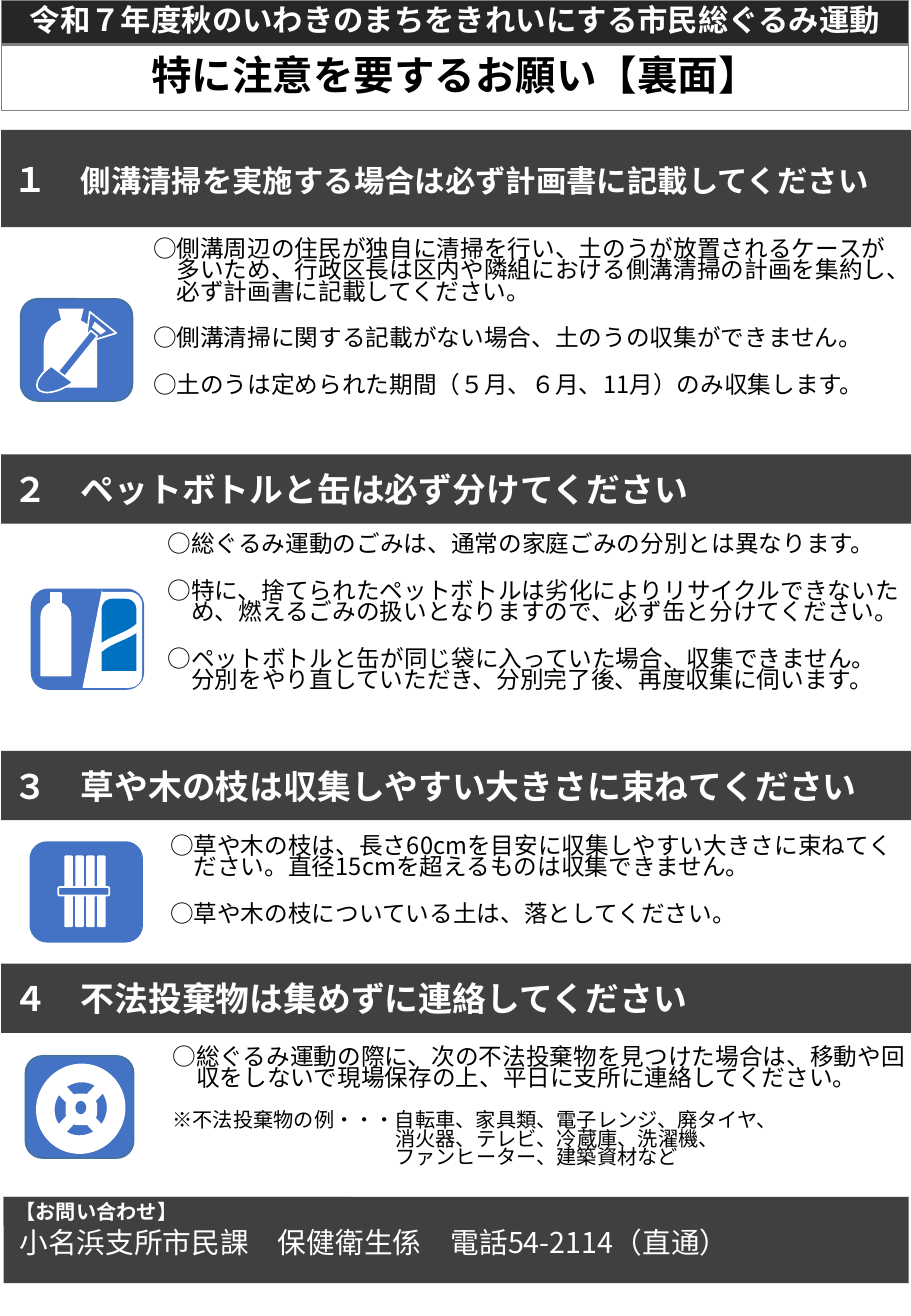
from dataclasses import dataclass
from typing import Optional

from lxml import etree
from pptx import Presentation
from pptx import util as u
from pptx.dml.color import RGBColor
from pptx.enum import shapes, text
from pptx.oxml import ns

Kind = shapes.MSO_SHAPE
Align = text.PP_ALIGN
Anchor = text.MSO_ANCHOR


@dataclass(frozen=True)
class Theme:
    font: str = "Noto Sans CJK JP"
    black: str = "000000"
    white: str = "FFFFFF"
    banner: str = "262626"
    bar: str = "404040"
    border: str = "808080"
    tile: str = "4472C4"
    tile_edge: str = "43739E"
    can: str = "0070C0"
    title: int = 24
    heading: int = 20
    banner_size: int = 18
    contact: int = 17
    body: int = 14
    small: int = 12
    title_spacing: float = 0.9
    body_spacing: float = 0.75
    line_height: float = 1.09  # share of the type size, used for gaps


THEME = Theme()


@dataclass(frozen=True)
class Span:
    text: str
    size: float
    color: str = THEME.white
    bold: bool = True


@dataclass(frozen=True)
class Item:
    lines: tuple[str, ...]
    size: int = THEME.body
    hang: int = 1  # indent of the following lines, in characters


@dataclass(frozen=True)
class Section:
    number: str
    heading: str
    top: float
    body_box: tuple[float, float, float, float]
    items: tuple[Item, ...]
    height: float = 0.57
    heading_size: int = THEME.heading


@dataclass(frozen=True)
class Part:
    kind: Kind
    box: tuple[float, float, float, float]
    fill: str = THEME.white
    line: Optional[str] = None
    turn: float = 0
    adjust: tuple[float, ...] = ()
    flip: bool = False
    line_width: float = 1


SECTIONS = (
    Section("１", "側溝清掃を実施する場合は必ず計画書に記載してください", 1.07, (1.23, 1.96, 6.11, 1.76), (
        Item(("○側溝周辺の住民が独自に清掃を行い、土のうが放置されるケースが",
              "多いため、行政区長は区内や隣組における側溝清掃の計画を集約し、",
              "必ず計画書に記載してください。")),
        Item(("○側溝清掃に関する記載がない場合、土のうの収集ができません。",)),
        Item(("○土のうは定められた期間（５月、６月、11月）のみ収集します。",)),
    ), 0.8, 18),
    Section("２", "ペットボトルと缶は必ず分けてください", 3.74, (1.35, 4.39, 6.11, 1.73), (
        Item(("○総ぐるみ運動のごみは、通常の家庭ごみの分別とは異なります。",)),
        Item(("○特に、捨てられたペットボトルは劣化によりリサイクルできないた",
              "め、燃えるごみの扱いとなりますので、必ず缶と分けてください。")),
        Item(("○ペットボトルと缶が同じ袋に入っていた場合、収集できません。",
              "分別をやり直していただき、分別完了後、再度収集に伺います。")),
    )),
    Section("３", "草や木の枝は収集しやすい大きさに束ねてください", 6.18, (1.37, 6.87, 6.11, 1.18), (
        Item(("○草や木の枝は、長さ60cmを目安に収集しやすい大きさに束ねてく",
              "ださい。直径15cmを超えるものは収集できません。")),
        Item(("○草や木の枝についている土は、落としてください。",)),
    )),
    Section("４", "不法投棄物は集めずに連絡してください", 7.93, (1.39, 8.61, 6.11, 1.18), (
        Item(("○総ぐるみ運動の際に、次の不法投棄物を見つけた場合は、移動や回",
              "収をしないで現場保存の上、平日に支所に連絡してください。")),
        Item(("※不法投棄物の例・・・自転車、家具類、電子レンジ、廃タイヤ、",
              "消火器、テレビ、冷蔵庫、洗濯機、",
              "ファンヒーター、建築資材など"), THEME.small, 11),
    )),
)

SANDBAG_AND_SHOVEL = (
    Part(Kind.ROUNDED_RECTANGLE, (0.17, 2.46, 0.92, 0.84), THEME.tile, THEME.tile_edge),
    Part(Kind.ROUND_2_SAME_RECTANGLE, (0.36, 2.62, 0.44, 0.57), adjust=(0.5, 0)),
    Part(Kind.TRAPEZOID, (0.48, 2.54, 0.21, 0.11), flip=True),
    Part(Kind.ISOSCELES_TRIANGLE, (0.64, 2.63, 0.28, 0.22), THEME.tile, THEME.white, 38.7, (0.47,), True),
    Part(Kind.RECTANGLE, (0.59, 2.69, 0.07, 0.48), THEME.tile, THEME.white, 38.7),
    Part(Kind.CHORD, (0.28, 2.98, 0.45, 0.21), THEME.tile, THEME.white, 329.6, (38.02, 150.92)),
    Part(Kind.TRAPEZOID, (0.75, 2.68, 0.12, 0.05), turn=39.4, flip=True),
)
BOTTLE_AND_CAN = (
    Part(Kind.ROUNDED_RECTANGLE, (0.26, 4.85, 0.92, 0.82), THEME.tile, THEME.tile),
    Part(Kind.ROUND_2_SAME_RECTANGLE, (0.34, 4.96, 0.24, 0.6), line=THEME.white, adjust=(0.47, 0)),
    Part(Kind.RECTANGLE, (0.42, 4.88, 0.08, 0.09), line=THEME.white),
    Part(Kind.ROUND_2_SAME_RECTANGLE, (0.61, 5.1, 0.79, 0.33), turn=90, adjust=(0.32, 0)),
    Part(Kind.ISOSCELES_TRIANGLE, (0.68, 4.85, 0.19, 0.81), adjust=(0.84,)),
    Part(Kind.ROUND_2_SAME_RECTANGLE, (0.83, 4.92, 0.3, 0.61), THEME.can, THEME.white, adjust=(0.3, 0)),
    Part(Kind.WAVE, (0.8, 5.22, 0.36, 0.06), line=THEME.white, turn=330.5),
)
BRANCH_BUNDLE = (
    Part(Kind.ROUNDED_RECTANGLE, (0.25, 6.93, 0.92, 0.82), THEME.tile, THEME.tile),
    *(Part(Kind.ROUNDED_RECTANGLE, (0.53 + 0.09 * stick, 7.04, 0.07, 0.59)) for stick in range(4)),
    Part(Kind.ROUNDED_RECTANGLE, (0.48, 7.3, 0.42, 0.07), THEME.tile, THEME.white),
)
TYRE = (
    Part(Kind.ROUNDED_RECTANGLE, (0.21, 8.69, 0.89, 0.84), THEME.tile, THEME.tile_edge),
    Part(Kind.DONUT, (0.3, 8.75, 0.73, 0.75), turn=34.8, adjust=(0.21,)),
    Part(Kind.MATH_MULTIPLY, (0.35, 8.8, 0.62, 0.66), adjust=(0.15,)),
    Part(Kind.ROUNDED_RECTANGLE, (0.54, 9, 0.26, 0.26), adjust=(0.4,)),
    Part(Kind.OVAL, (0.62, 9.06, 0.09, 0.11), THEME.tile),
)


def add_part(page, part: Part):
    shape = page.shapes.add_shape(part.kind, *map(u.Inches, part.box))
    shape.shadow.inherit = False
    shape.fill.solid()
    shape.fill.fore_color.rgb = RGBColor.from_string(part.fill)
    if part.line:
        shape.line.color.rgb = RGBColor.from_string(part.line)
        shape.line.width = u.Pt(part.line_width)
    else:
        shape.line.fill.background()
    shape.rotation = part.turn
    for index, value in enumerate(part.adjust):
        shape.adjustments[index] = value
    if part.flip:
        shape._element.spPr.find(ns.qn("a:xfrm")).set("flipV", "1")
    return shape


def add_span(para, span: Span) -> None:
    run = para.add_run()
    run.text = span.text
    run.font.size = u.Pt(span.size)
    run.font.bold = span.bold
    run.font.color.rgb = RGBColor.from_string(span.color)
    run.font.name = THEME.font
    east_asian = etree.SubElement(run._r.get_or_add_rPr(), ns.qn("a:ea"))
    east_asian.set("typeface", THEME.font)


def write_line(box, spans: tuple[Span, ...], align=Align.LEFT, spacing: float = 1.0) -> None:
    box.text_frame.word_wrap = True
    box.text_frame.vertical_anchor = Anchor.MIDDLE
    para = box.text_frame.paragraphs[0]
    para.alignment = align
    para.line_spacing = spacing
    for span in spans:
        add_span(para, span)


def place(box, area: tuple[float, float, float, float]) -> None:
    box.left, box.top, box.width, box.height = map(u.Inches, area)


def set_tight_margins(frame) -> None:
    frame.margin_left = frame.margin_right = u.Inches(0.03)
    frame.margin_top = frame.margin_bottom = u.Inches(0.02)


def write_items(box, items: tuple[Item, ...]) -> None:
    frame = box.text_frame
    frame.word_wrap = True
    frame.auto_size = text.MSO_AUTO_SIZE.NONE
    frame.vertical_anchor = Anchor.TOP
    set_tight_margins(frame)
    for item_index, item in enumerate(items):
        for line_index, line in enumerate(item.lines):
            starts_item = line_index == 0
            first = starts_item and item_index == 0
            para = frame.paragraphs[0] if first else frame.add_paragraph()
            para.alignment = Align.LEFT
            para.line_spacing = THEME.body_spacing
            para.space_before = u.Pt(round(item.size * THEME.line_height) if starts_item and not first else 0)
            hang = u.Pt(item.size * item.hang)
            properties = para._p.get_or_add_pPr()
            properties.set("marL", str(hang))
            properties.set("indent", str(-hang if starts_item else 0))
            properties.set("hangingPunct", "1")
            etree.SubElement(properties, ns.qn("a:buNone"))
            add_span(para, Span(line, item.size, THEME.black, False))


def main() -> None:
    deck = Presentation()
    deck.slide_width, deck.slide_height = u.Inches(7.5), u.Inches(10.83)
    page = deck.slides.add_slide(deck.slide_layouts.get_by_name("Comparison"))
    title, *bodies = page.placeholders

    # Banner and title
    place(title, (0.01, 0.37, 7.47, 0.54))
    title.line.color.rgb = RGBColor.from_string(THEME.border)
    title.line.width = u.Pt(0.75)
    title.text_frame.auto_size = text.MSO_AUTO_SIZE.NONE
    write_line(title, (Span("特に注意を要するお願い【裏面】", THEME.title, THEME.black),),
               Align.CENTER, THEME.title_spacing)
    banner = add_part(page, Part(Kind.RECTANGLE, (0.01, 0, 7.47, 0.36), THEME.banner, THEME.border, line_width=0.75))
    write_line(banner, (Span("令和７年度秋のいわきのまちをきれいにする市民総ぐるみ運動", THEME.banner_size),),
               Align.CENTER, THEME.title_spacing)

    # Numbered sections
    for section, body in zip(SECTIONS, bodies):
        bar = add_part(page, Part(Kind.RECTANGLE, (0.01, section.top, 7.5, section.height), THEME.bar))
        write_line(bar, (Span(section.number + "　", THEME.heading), Span(section.heading, section.heading_size)))
        place(body, section.body_box)
        write_items(body, section.items)

    # Icons
    for part in SANDBAG_AND_SHOVEL + BOTTLE_AND_CAN + BRANCH_BUNDLE + TYRE:
        add_part(page, part)

    # Contact
    add_part(page, Part(Kind.RECTANGLE, (0.03, 9.85, 7.45, 0.71), THEME.bar))
    label = add_part(page, Part(Kind.RECTANGLE, (0.03, 9.85, 2.86, 0.24), THEME.bar))
    write_line(label, (Span("【お問い合わせ】", THEME.small),))
    office = add_part(page, Part(Kind.RECTANGLE, (0.13, 10.13, 7.34, 0.24), THEME.bar))
    write_line(office, (Span("小名浜支所市民課　保健衛生係　電話54-2114（直通）", THEME.contact, bold=False),),
               spacing=THEME.body_spacing)
    set_tight_margins(office.text_frame)
    office.text_frame.vertical_anchor = Anchor.TOP

    deck.save("out.pptx")


if __name__ == "__main__":
    main()
